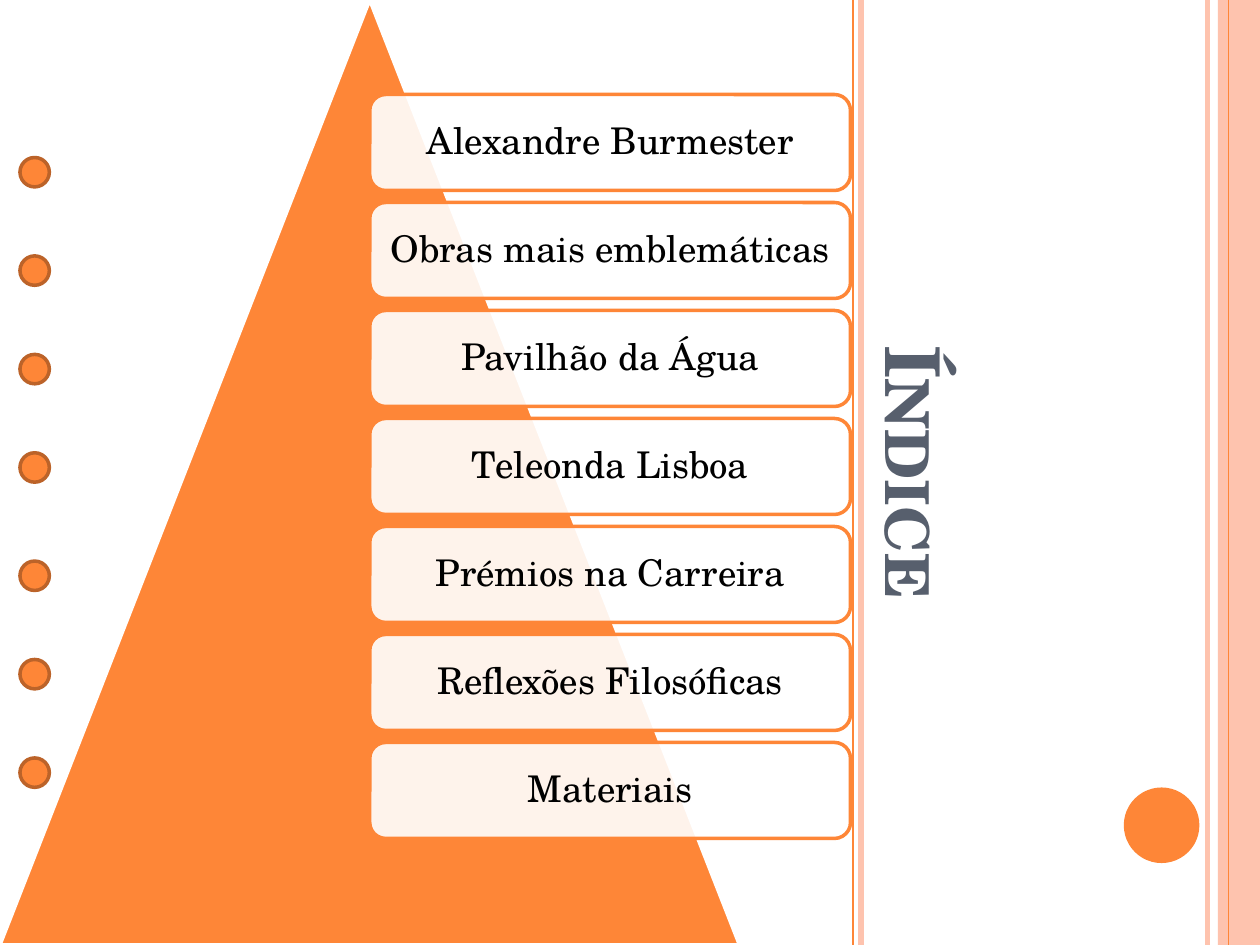
from lxml.etree import SubElement
from pptx import Presentation
from pptx.dml.color import RGBColor
from pptx.enum.shapes import MSO_CONNECTOR, MSO_SHAPE
from pptx.enum.text import MSO_ANCHOR, MSO_AUTO_SIZE, PP_ALIGN
from pptx.oxml.ns import qn
from pptx.util import Pt

FONT = "TeX Gyre Schola"
ORANGE = "FE8637"
PEACH = "FEC3AE"
WHITE = "FFFFFF"
SLIDE_WIDTH, SLIDE_HEIGHT = 720, 540
TOPICS = [
    "Alexandre Burmester",
    "Obras mais emblemáticas",
    "Pavilhão da Água",
    "Teleonda Lisboa",
    "Prémios na Carreira",
    "Reflexões Filosóficas",
    "Materiais",
]


def color(value):
    return RGBColor.from_string(value)


def write_text(shape, text, size, text_color, bold=False, small_caps=False,
               anchor=MSO_ANCHOR.MIDDLE, margin=3.6, line_spacing=1.0, wrap=True):
    frame = shape.text_frame
    frame.word_wrap = wrap
    frame.auto_size = MSO_AUTO_SIZE.NONE
    frame.vertical_anchor = anchor
    frame.margin_left = frame.margin_right = Pt(margin)
    frame.margin_top = frame.margin_bottom = Pt(margin)
    paragraph = frame.paragraphs[0]
    paragraph.alignment = PP_ALIGN.CENTER
    paragraph.line_spacing = line_spacing
    run = paragraph.add_run()
    run.text = text
    run.font.name = FONT
    run.font.size = Pt(size)
    run.font.bold = bold
    run.font.color.rgb = color(text_color)
    if small_caps:
        run._r.get_or_add_rPr().set("cap", "small")


def add_box(slide, kind, left, top, width, height, fill, line=None, opacity=100):
    shape = slide.shapes.add_shape(kind, Pt(left), Pt(top), Pt(width), Pt(height))
    shape.shadow.inherit = False
    shape.fill.solid()
    shape.fill.fore_color.rgb = color(fill)
    if opacity < 100:
        fill_color = shape._element.spPr.find(qn("a:solidFill")).find(qn("a:srgbClr"))
        SubElement(fill_color, qn("a:alpha"), val=str(opacity * 1000))
    if line:
        shape.line.color.rgb = color(line)
        shape.line.width = Pt(2)
    else:
        shape.line.fill.background()
    return shape


def add_vertical_line(slide, x, line_color, width):
    connector = slide.shapes.add_connector(
        MSO_CONNECTOR.STRAIGHT, Pt(x), Pt(0), Pt(x), Pt(SLIDE_HEIGHT))
    connector.line.color.rgb = color(line_color)
    connector.line.width = Pt(width)
    SubElement(connector._element.spPr, qn("a:effectLst"))


def add_side_decoration(slide):
    add_vertical_line(slide, 690, PEACH, 3)
    add_box(slide, MSO_SHAPE.OVAL, 642.2, 450, 43.2, 43.2, ORANGE)
    add_box(slide, MSO_SHAPE.RECTANGLE, 696, 0, 24, SLIDE_HEIGHT, PEACH)
    add_vertical_line(slide, 702, ORANGE, 0.75)
    add_vertical_line(slide, 492, PEACH, 3)
    add_vertical_line(slide, 487.5, ORANGE, 1)


def add_title(slide, text):
    title = slide.shapes.title
    title.left, title.top = Pt(263.5), Pt(252)
    title.width, title.height = Pt(497), Pt(36)
    title.rotation = 90
    write_text(title, text, 43.2, "575F6D", bold=True, small_caps=True,
               anchor=MSO_ANCHOR.BOTTOM)


def add_topic_pyramid(slide):
    add_box(slide, MSO_SHAPE.ISOSCELES_TRIANGLE, 0, 0, 422.6, SLIDE_HEIGHT, ORANGE, WHITE)
    for index, topic in enumerate(TOPICS):
        box = add_box(slide, MSO_SHAPE.ROUNDED_RECTANGLE, 211.3, 54 + index * 61.71,
                      274.7, 54.85, WHITE, ORANGE, opacity=90)
        write_text(box, topic, 21, "000000", margin=9, line_spacing=0.9)


def add_buttons(slide):
    for first_top, count in ((90, 4), (320.6, 3)):
        for index in range(count):
            add_box(slide, MSO_SHAPE.OVAL, 11.4, first_top + index * 56.25,
                    16.8, 16.8, ORANGE, "BC6329")


def main():
    presentation = Presentation()
    presentation.slide_width = Pt(SLIDE_WIDTH)
    presentation.slide_height = Pt(SLIDE_HEIGHT)
    slide = presentation.slides.add_slide(presentation.slide_layouts[5])
    add_side_decoration(slide)
    add_title(slide, "Índice")
    add_topic_pyramid(slide)
    add_buttons(slide)
    presentation.save("out.pptx")


if __name__ == "__main__":
    main()
